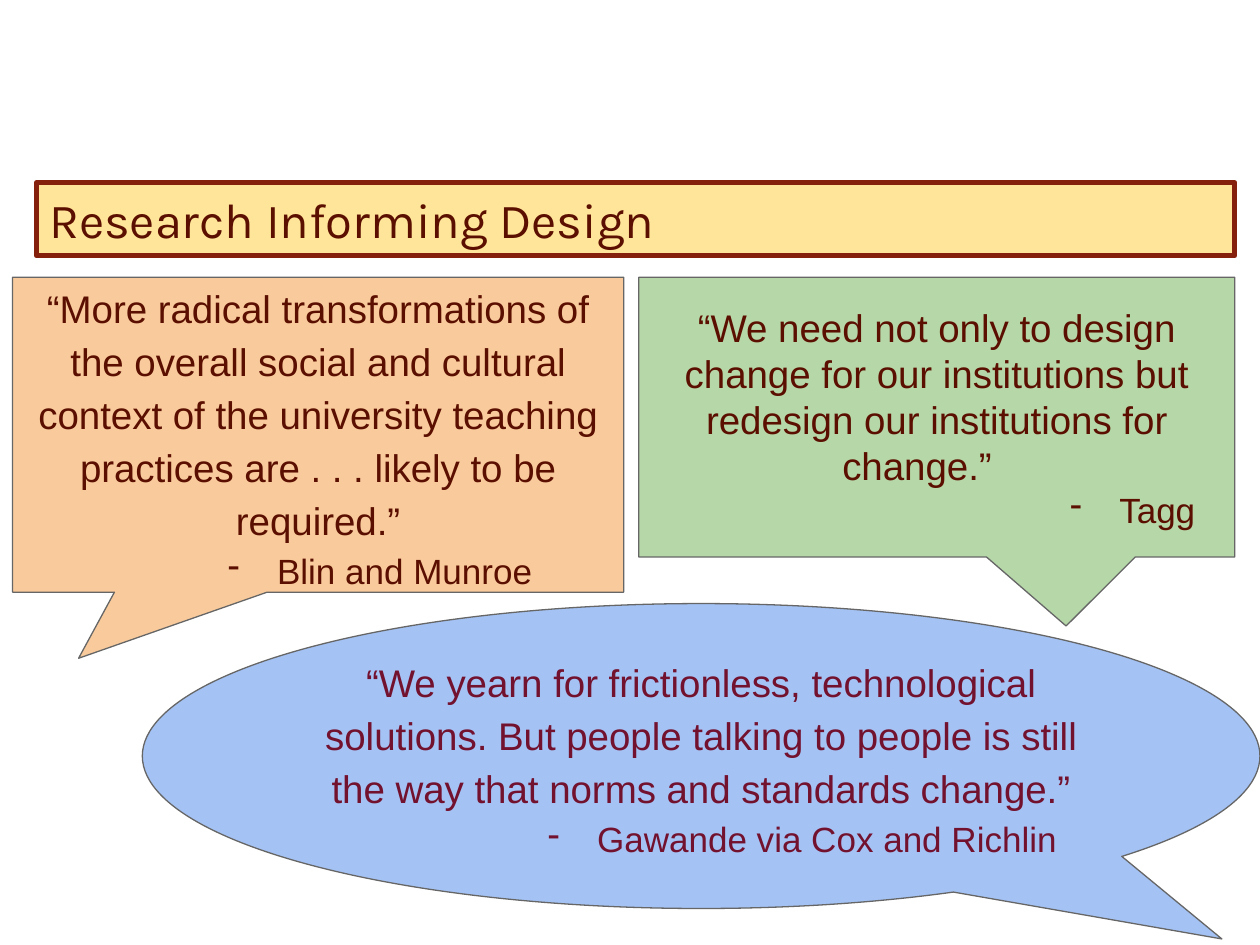
from lxml.etree import SubElement
from pptx import Presentation
from pptx.dml.color import RGBColor
from pptx.enum.shapes import MSO_SHAPE
from pptx.enum.text import MSO_ANCHOR, MSO_AUTO_SIZE, PP_ALIGN
from pptx.oxml.ns import qn
from pptx.util import Inches, Pt

BROWN = RGBColor(0x5B, 0x0F, 0x00)
WINE = RGBColor(0x73, 0x12, 0x2E)
RED = RGBColor(0x85, 0x20, 0x0C)
GRAY = RGBColor(0x66, 0x66, 0x66)
YELLOW = RGBColor(0xFF, 0xE5, 0x99)
BLUE = RGBColor(0xA4, 0xC2, 0xF4)
GREEN = RGBColor(0xB6, 0xD7, 0xA8)
ORANGE = RGBColor(0xF9, 0xCB, 0x9C)

TITLE = "Research Informing Design"
TITLE_BOX = (0.29, 1.45, 9.51, 0.58)

CALLOUTS = [
    dict(quote="“We yearn for frictionless, technological solutions. But people talking to "
               "people is still the way that norms and standards change.”",
         author="Gawande via Cox and Richlin", author_align=PP_ALIGN.CENTER, indent=2,
         shape=MSO_SHAPE.OVAL_CALLOUT, box=(1.13, 4.79, 8.87, 2.42),
         tail=(0.466, 0.6), fill=BLUE, color=WINE, spacing=1.15),
    dict(quote="“We need not only to design change for our institutions but redesign our "
               "institutions for change.”\t",
         author="Tagg", author_align=PP_ALIGN.CENTER, indent=3.5,
         shape=MSO_SHAPE.RECTANGULAR_CALLOUT, box=(5.07, 2.2, 4.73, 2.22),
         tail=(0.217, 0.747), fill=GREEN, color=BROWN, spacing=1),
    dict(quote="“More radical transformations of the overall social and cultural context of "
               "the university teaching practices are . . . likely to be required.”",
         author="Blin and Munroe", author_align=PP_ALIGN.LEFT, indent=2,
         shape=MSO_SHAPE.ROUNDED_RECTANGULAR_CALLOUT, box=(0.1, 2.2, 4.85, 2.5),
         tail=(-0.392, 0.71, 0), fill=ORANGE, color=BROWN, spacing=1.15),
]


def format_box(sp, fill, line, width):
    sp.fill.solid()
    sp.fill.fore_color.rgb = fill
    sp.line.color.rgb = line
    sp.line.width = Pt(width)
    tf = sp.text_frame
    tf.word_wrap = True
    tf.auto_size = MSO_AUTO_SIZE.NONE
    tf.vertical_anchor = MSO_ANCHOR.MIDDLE
    tf.margin_left = tf.margin_top = tf.margin_right = tf.margin_bottom = Inches(0.1)
    return tf


def add_dash(p, color, indent):
    """Give the paragraph a hanging dash bullet."""
    pPr = p._p.get_or_add_pPr()
    pPr.set("marL", str(Inches(indent)))
    pPr.set("indent", str(Inches(-0.39)))
    SubElement(SubElement(pPr, qn("a:buClr")), qn("a:srgbClr"), val=str(color))
    SubElement(pPr, qn("a:buChar"), char="-")


def write(p, text, size, color, font="Arial", align=PP_ALIGN.CENTER, spacing=1):
    p.alignment = align
    p.line_spacing = spacing
    r = p.add_run()
    r.text = text
    r.font.name = font
    r.font.size = Pt(size)
    r.font.color.rgb = color


def add_callout(s, c):
    sp = s.shapes.add_shape(c["shape"], *map(Inches, c["box"]))
    sp.shadow.inherit = False
    for i, value in enumerate(c["tail"]):
        sp.adjustments[i] = value
    tf = format_box(sp, c["fill"], GRAY, 0.75)
    write(tf.paragraphs[0], c["quote"], 22, c["color"], spacing=c["spacing"])
    p = tf.add_paragraph()
    add_dash(p, c["color"], c["indent"])
    write(p, c["author"], 20, c["color"], align=c["author_align"], spacing=c["spacing"])


def main():
    prs = Presentation()
    prs.slide_width, prs.slide_height = Inches(10), Inches(7.5)
    s = prs.slides.add_slide(prs.slide_layouts[5])
    title = s.shapes.title
    title.left, title.top, title.width, title.height = map(Inches, TITLE_BOX)
    tf = format_box(title, YELLOW, RED, 3)
    write(tf.paragraphs[0], TITLE, 28, BROWN, font="Karla", align=PP_ALIGN.LEFT)
    for c in CALLOUTS:
        add_callout(s, c)
    prs.save("out.pptx")


if __name__ == "__main__":
    main()
